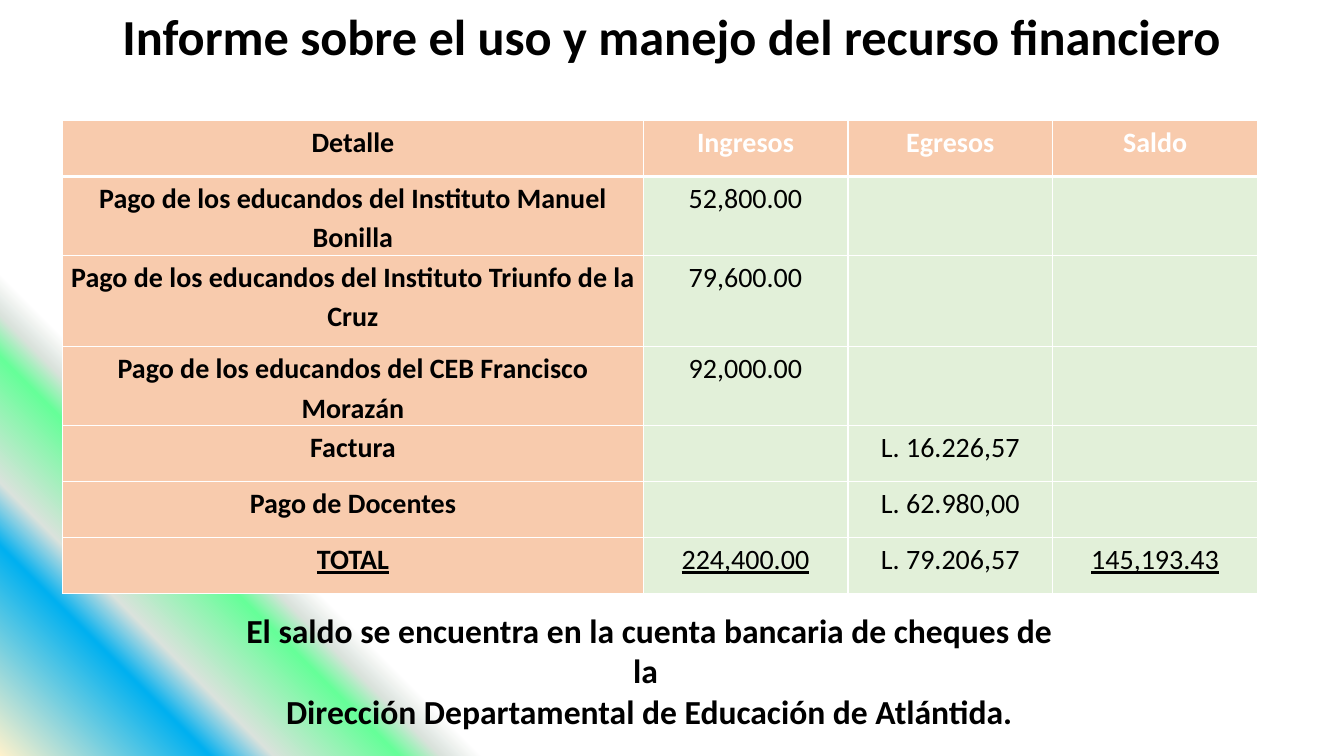
from pptx import Presentation
from pptx.dml.color import RGBColor
from pptx.enum.text import MSO_ANCHOR, PP_ALIGN
from pptx.oxml import parse_xml
from pptx.oxml.ns import nsdecls
from pptx.util import Pt

CENTER = PP_ALIGN.CENTER
TOP = MSO_ANCHOR.TOP
BLACK = RGBColor(0x00, 0x00, 0x00)
WHITE = RGBColor(0xFF, 0xFF, 0xFF)
PEACH = RGBColor(0xF8, 0xCB, 0xAD)
MINT = RGBColor(0xE2, 0xF0, 0xD9)
CREAM = RGBColor(0xFF, 0xF2, 0xCC)
BLUE = RGBColor(0x00, 0xB0, 0xF0)
GRAY = RGBColor(0xDA, 0xE2, 0xDC)
GREEN = RGBColor(0x66, 0xFF, 0x99)

STOPS = [(0, CREAM), (10, BLUE), (13, GRAY), (19, GREEN), (21, GRAY), (23, WHITE)]
COLS = [414.6, 146.3, 146.3, 146.3]
HEIGHTS = [40, 49, 65.4, 40, 40, 40, 40]
ROWS = [
    ["Detalle", "Ingresos", "Egresos", "Saldo"],
    ["Pago de los educandos del Instituto Manuel Bonilla", "52,800.00", "", ""],
    ["Pago de los educandos del Instituto Triunfo de la Cruz", "79,600.00", "", ""],
    ["Pago de los educandos del CEB Francisco Morazán", "92,000.00", "", ""],
    ["Factura", "", "L. 16.226,57", ""],
    ["Pago de Docentes", "", "L. 62.980,00", ""],
    ["TOTAL", "224,400.00", "L. 79.206,57", "145,193.43"],
]
UNDERLINED = {"TOTAL", "224,400.00", "145,193.43"}


def write(p, text, size=20, color=BLACK, bold=True, underline=False, spacing=None):
    """Put one formatted, centred run into a paragraph."""
    p.alignment = CENTER
    if spacing:
        p.line_spacing = spacing
    r = p.add_run()
    r.text = text
    f = r.font
    f.name, f.size, f.bold, f.underline = "Calibri", Pt(size), bold, underline
    f.color.rgb = color


class Deck:
    """Holds the presentation, its current slide and the shared style."""

    def __init__(self):
        self.prs = Presentation()
        self.prs.slide_width, self.prs.slide_height = Pt(960), Pt(540)
        self.s = self.prs.slides.add_slide(self.prs.slide_layouts[6])

    def background(self, stops):
        """Fill the slide with a gradient that starts at the lower left."""
        gs = "".join(
            f'<a:gs pos="{pos * 1000}"><a:srgbClr val="{color}"/></a:gs>'
            for pos, color in stops
        )
        self.s.element.cSld.insert(0, parse_xml(
            f'<p:bg {nsdecls("p", "a")}><p:bgPr><a:gradFill rotWithShape="1">'
            f'<a:gsLst>{gs}</a:gsLst><a:path path="circle">'
            '<a:fillToRect t="100000" r="100000"/></a:path></a:gradFill>'
            '<a:effectLst/></p:bgPr></p:bg>'
        ))

    def text(self, x, y, w, h, lines, size):
        """Add a centred text box with one paragraph per line."""
        tf = self.s.shapes.add_textbox(Pt(x), Pt(y), Pt(w), Pt(h)).text_frame
        tf.word_wrap = True
        for i, line in enumerate(lines):
            write(tf.add_paragraph() if i else tf.paragraphs[0], line, size=size)

    def borders(self, cell, top, bottom):
        """Draw white borders round a cell, one point wide at the sides."""
        tcPr = cell._tc.get_or_add_tcPr()
        for i, (side, width) in enumerate(zip("LRTB", (1, 1, top, bottom))):
            tcPr.insert(i, parse_xml(
                f'<a:ln{side} {nsdecls("a")} w="{Pt(width)}"><a:solidFill>'
                f'<a:srgbClr val="{WHITE}"/></a:solidFill></a:ln{side}>'
            ))

    def table(self, x, y, cols, heights, rows):
        """Add the table with a peach header row and first column."""
        tb = self.s.shapes.add_table(
            len(rows), len(cols), Pt(x), Pt(y), Pt(sum(cols)), Pt(sum(heights))
        ).table
        for col, width in zip(tb.columns, cols):
            col.width = Pt(width)
        for i, row in enumerate(rows):
            tb.rows[i].height = Pt(heights[i])
            for j, text in enumerate(row):
                cell = tb.cell(i, j)
                head = i == 0 or j == 0
                cell.fill.solid()
                cell.fill.fore_color.rgb = PEACH if head else MINT
                cell.margin_left = cell.margin_right = Pt(5)
                cell.margin_top = cell.margin_bottom = Pt(0)
                cell.vertical_anchor = TOP
                self.borders(cell, 3 if i == 1 else 1, 3 if i == 0 else 1)
                if text:
                    write(cell.text_frame.paragraphs[0], text, bold=head,
                          color=WHITE if i == 0 and j else BLACK,
                          underline=text in UNDERLINED, spacing=1.15)


def main():
    """Build the slide and save it."""
    deck = Deck()
    deck.background(STOPS)
    deck.table(44.8, 86, COLS, HEIGHTS, ROWS)
    deck.text(0, 0, 960, 51, ["Informe sobre el uso y manejo del recurso financiero"], 36)
    deck.text(165, 432, 597.6, 94.3, [
        "El saldo se encuentra en la cuenta bancaria de cheques de la ",
        "Dirección Departamental de Educación de Atlántida.",
    ], 24)
    deck.prs.save("out.pptx")


if __name__ == "__main__":
    main()
